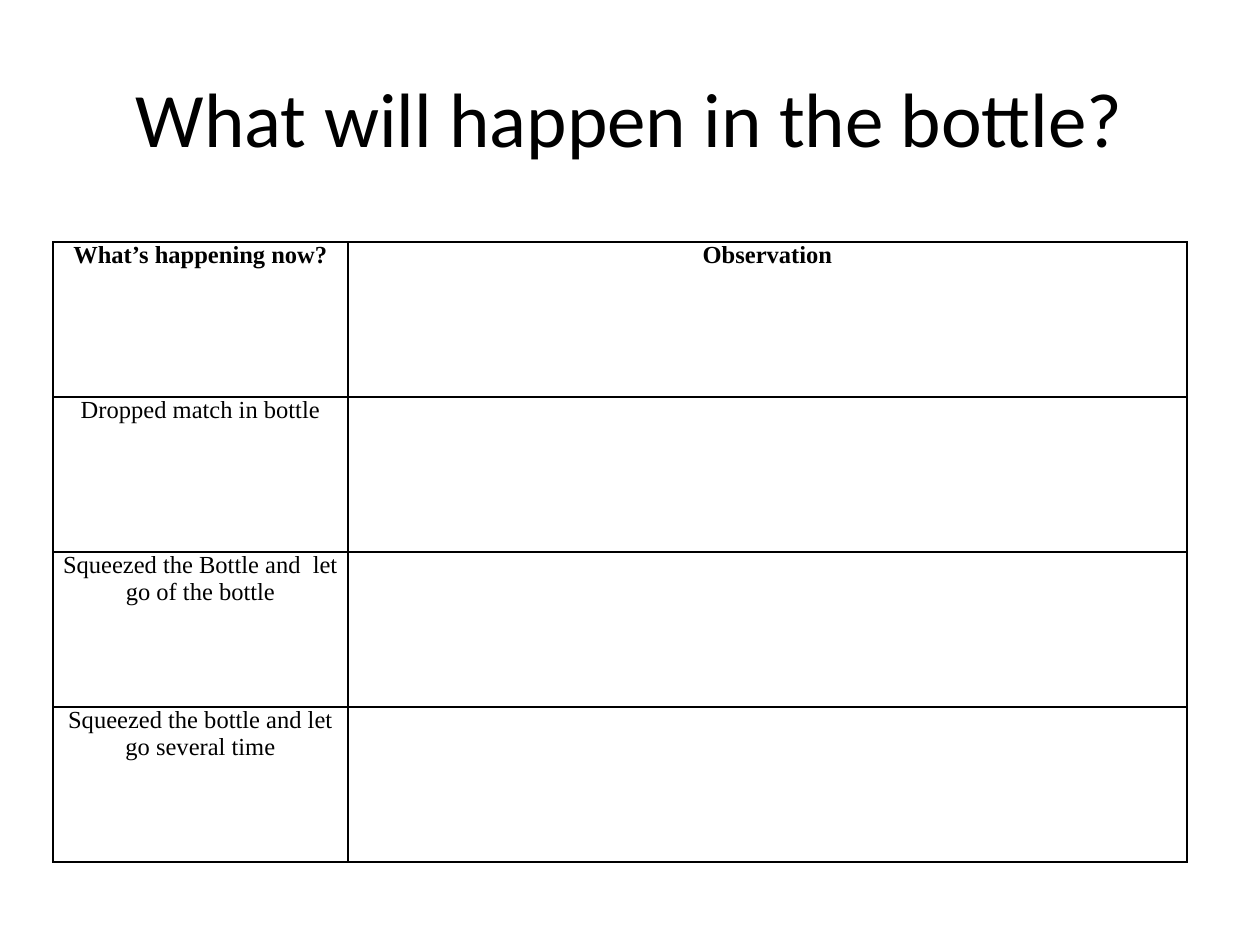
from lxml import etree
from pptx import Presentation
from pptx.dml.color import RGBColor
from pptx.enum.text import MSO_ANCHOR as Anchor, PP_ALIGN as Align
from pptx.oxml.ns import qn
from pptx.util import Emu, Pt

PX_PER_INCH = 126
BLACK = RGBColor(0x00, 0x00, 0x00)

ROWS = [
    ("What’s happening now?", "Observation"),
    ("Dropped match in bottle", ""),
    ("Squeezed the Bottle and  let go of the bottle", ""),
    ("Squeezed the bottle and let go several time", ""),
]
COLUMN_WIDTHS = (295, 839)
ROW_HEIGHT = 155


def px(length):
    return Emu(round(length * 914400 / PX_PER_INCH))


def write_text(frame, text, *, font, size, bold=False, color=BLACK, align=Align.CENTER):
    para = frame.paragraphs[0]
    para.alignment = align
    span = para.add_run()
    span.text = text
    span.font.name = font
    span.font.size = Pt(size)
    span.font.bold = bold
    span.font.color.rgb = color


def add_title(page, text, left, top, width, height):
    box = page.shapes.add_textbox(px(left), px(top), px(width), px(height))
    frame = box.text_frame
    frame.word_wrap = True
    frame.vertical_anchor = Anchor.MIDDLE
    write_text(frame, text, font="Calibri", size=44)


def add_borders(cell, color=BLACK, width=1):
    properties = cell._tc.get_or_add_tcPr()
    for position, side in enumerate(("lnL", "lnR", "lnT", "lnB")):
        line = etree.Element(qn(f"a:{side}"), w=str(Pt(width)))
        fill = etree.SubElement(line, qn("a:solidFill"))
        etree.SubElement(fill, qn("a:srgbClr"), val=str(color))
        # Borders must come before the cell fill
        properties.insert(position, line)


def add_observation_table(page, left, top):
    shape = page.shapes.add_table(
        len(ROWS), len(COLUMN_WIDTHS), px(left), px(top),
        px(sum(COLUMN_WIDTHS)), px(ROW_HEIGHT * len(ROWS)))
    table = shape.table
    table.horz_banding = False
    for column, width in zip(table.columns, COLUMN_WIDTHS):
        column.width = px(width)

    for row_index, texts in enumerate(ROWS):
        table.rows[row_index].height = px(ROW_HEIGHT)
        for column_index, text in enumerate(texts):
            cell = table.cell(row_index, column_index)
            cell.fill.background()
            cell.margin_left = cell.margin_right = px(9)
            cell.margin_top = cell.margin_bottom = 0
            add_borders(cell)
            if text:
                write_text(cell.text_frame, text, font="Times New Roman",
                           size=14, bold=row_index == 0)


def main():
    deck = Presentation()
    deck.slide_width, deck.slide_height = px(1260), px(945)
    page = deck.slides.add_slide(deck.slide_layouts[6])

    # Heading
    add_title(page, "What will happen in the bottle?", 63, 38, 1134, 158)
    # Worksheet grid
    add_observation_table(page, 53, 242)

    deck.save("out.pptx")


if __name__ == "__main__":
    main()
